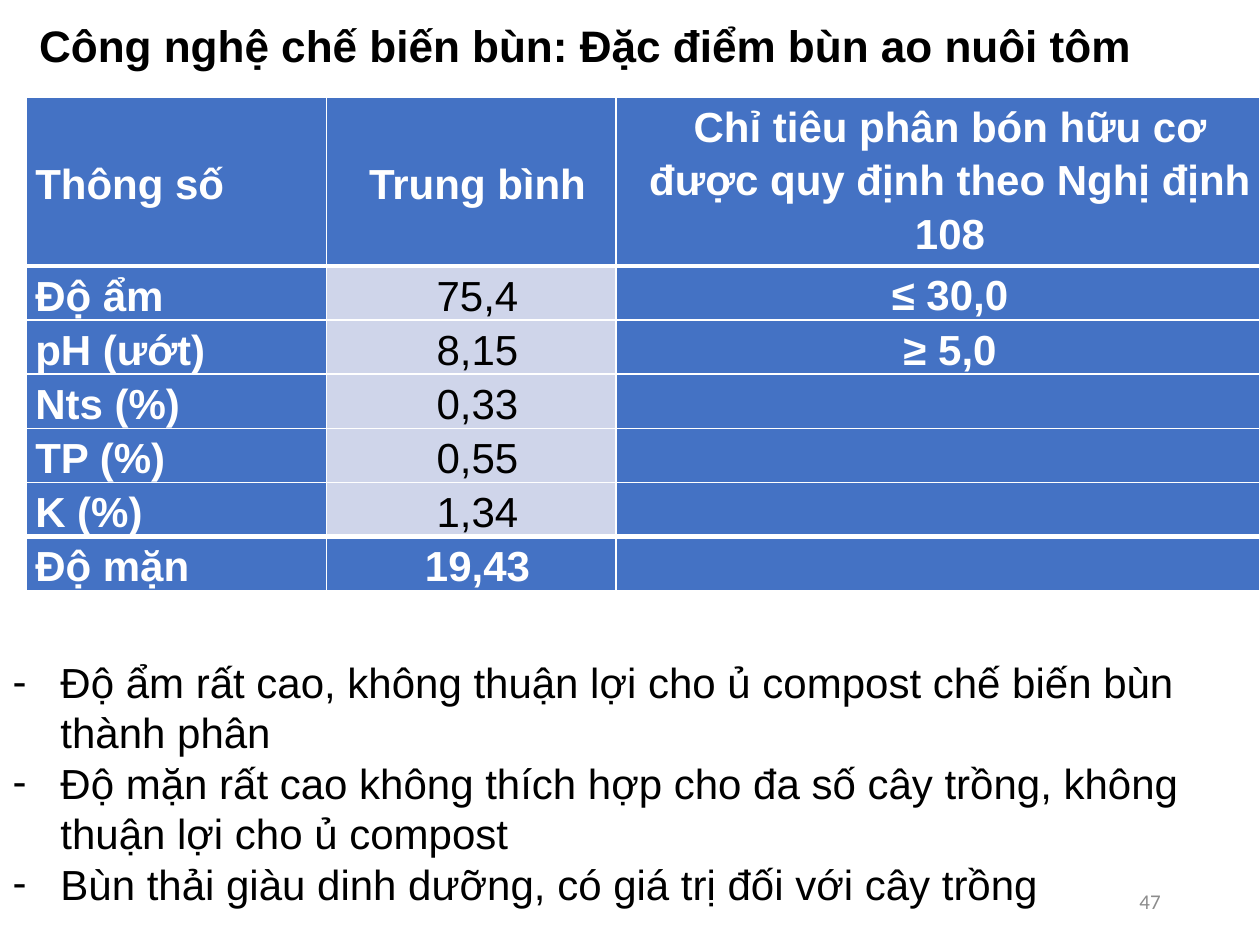
from lxml.etree import SubElement
from pptx import Presentation
from pptx.dml.color import RGBColor
from pptx.enum.text import MSO_ANCHOR as ANCHOR, MSO_AUTO_SIZE as AUTO, PP_ALIGN as ALIGN
from pptx.oxml import parse_xml
from pptx.oxml.ns import nsdecls, qn
from pptx.util import Inches, Pt

BLACK = RGBColor(0x00, 0x00, 0x00)
WHITE = RGBColor(0xFF, 0xFF, 0xFF)
BLUE = RGBColor(0x44, 0x72, 0xC4)
PALE = RGBColor(0xCF, 0xD5, 0xEA)
GREY = RGBColor(0x8C, 0x8C, 0x8C)


def write(p, text, size=24, font="Arial", color=BLACK, bold=False,
          align=ALIGN.LEFT, spacing=1.0, before=0, indent=0, hanging=0):
    p.alignment, p.line_spacing, p.space_before = align, spacing, Pt(before)
    pPr = p._p.get_or_add_pPr()
    pPr.set("marL", str(Inches(indent)))
    pPr.set("indent", str(-Inches(hanging)))
    r = p.add_run()
    r.text = text
    r.font.size, r.font.name, r.font.bold = Pt(size), font, bold
    r.font.color.rgb = color


def set_borders(cell, **widths):
    for i, (side, width) in enumerate(widths.items()):
        cell._tc.get_or_add_tcPr().insert(i, parse_xml(
            f'<a:ln{side} {nsdecls("a")} w="{Pt(width)}"><a:solidFill>'
            f'<a:srgbClr val="{WHITE}"/></a:solidFill></a:ln{side}>'))


prs = Presentation()
prs.slide_width, prs.slide_height = Inches(10), Inches(7.5)
s = prs.slides.add_slide(prs.slide_layouts[1])
W, H = prs.slide_width, prs.slide_height
LEFT, TOP = Inches(0.21), Inches(0.77)

# Title
title = s.shapes.title
title.left, title.top, title.width, title.height = LEFT, 0, W - LEFT, TOP
tf = title.text_frame
tf.vertical_anchor = ANCHOR.MIDDLE
write(tf.paragraphs[0], "Công nghệ chế biến bùn: Đặc điểm bùn ao nuôi tôm",
      size=25.2, bold=True, spacing=0.9)

# Sludge parameters table
rows = [
    ("Thông số", "Trung bình", "Chỉ tiêu phân bón hữu cơ được quy định theo Nghị định 108"),
    ("Độ ẩm", "75,4", "≤ 30,0"),
    ("pH (ướt)", "8,15", "≥ 5,0"),
    ("Nts (%)", "0,33", ""),
    ("TP (%)", "0,55", ""),
    ("K (%)", "1,34", ""),
    ("Độ mặn", "19,43", ""),
]
columns = [  # width, alignment, indent, anchor
    (2.38, ALIGN.JUSTIFY, 0.07, ANCHOR.MIDDLE),
    (2.30, ALIGN.CENTER, 0.10, ANCHOR.MIDDLE),
    (5.11, ALIGN.CENTER, 0.19, ANCHOR.TOP),
]
last = len(rows) - 1
table = s.shapes.add_table(len(rows), len(columns), LEFT, TOP,
                           W - LEFT, Inches(1.34 + 0.43 * last)).table
table.last_row = table.first_col = table.last_col = True
for i, row in enumerate(rows):
    table.rows[i].height = Inches(0.43 if i else 1.34)
    for j, (width, align, indent, anchor) in enumerate(columns):
        table.columns[j].width = Inches(width)
        cell = table.cell(i, j)
        cell.margin_left = cell.margin_right = cell.margin_top = cell.margin_bottom = 0
        cell.vertical_anchor = anchor
        plain = j == 1 and 0 < i < last
        cell.fill.solid()
        cell.fill.fore_color.rgb = PALE if plain else BLUE
        set_borders(cell, L=1, R=1, T=3 if i in (1, last) else 1,
                    B=3 if i in (0, last - 1) else 1)
        if row[j]:
            write(cell.text_frame.paragraphs[0], row[j], color=BLACK if plain else WHITE,
                  bold=not plain, align=align, spacing=1.15,
                  before=3 if i else 0, indent=indent)

# Remarks
body = s.placeholders[1]
body.left, body.top, body.width, body.height = 0, Inches(5.16), W, Inches(2.12)
tf = body.text_frame
tf.auto_size = AUTO.NONE
remarks = [
    "Độ ẩm rất cao, không thuận lợi cho ủ compost chế biến bùn thành phân",
    "Độ mặn rất cao không thích hợp cho đa số cây trồng, không thuận lợi cho ủ compost",
    "Bùn thải giàu dinh dưỡng, có giá trị đối với cây trồng",
]
for i, text in enumerate(remarks):
    p = tf.add_paragraph() if i else tf.paragraphs[0]
    write(p, text, indent=0.38, hanging=0.38)
    pPr = p._p.get_or_add_pPr()
    SubElement(pPr, qn("a:buFont"), typeface="Arial")
    SubElement(pPr, qn("a:buChar"), char="-")

# Page number
tf = s.shapes.add_textbox(Inches(7.06), Inches(6.95), Inches(2.25), Inches(0.4)).text_frame
tf.word_wrap = True
tf.vertical_anchor = ANCHOR.MIDDLE
write(tf.paragraphs[0], "47", size=12, font="Calibri", color=GREY, align=ALIGN.RIGHT)

prs.save("out.pptx")
